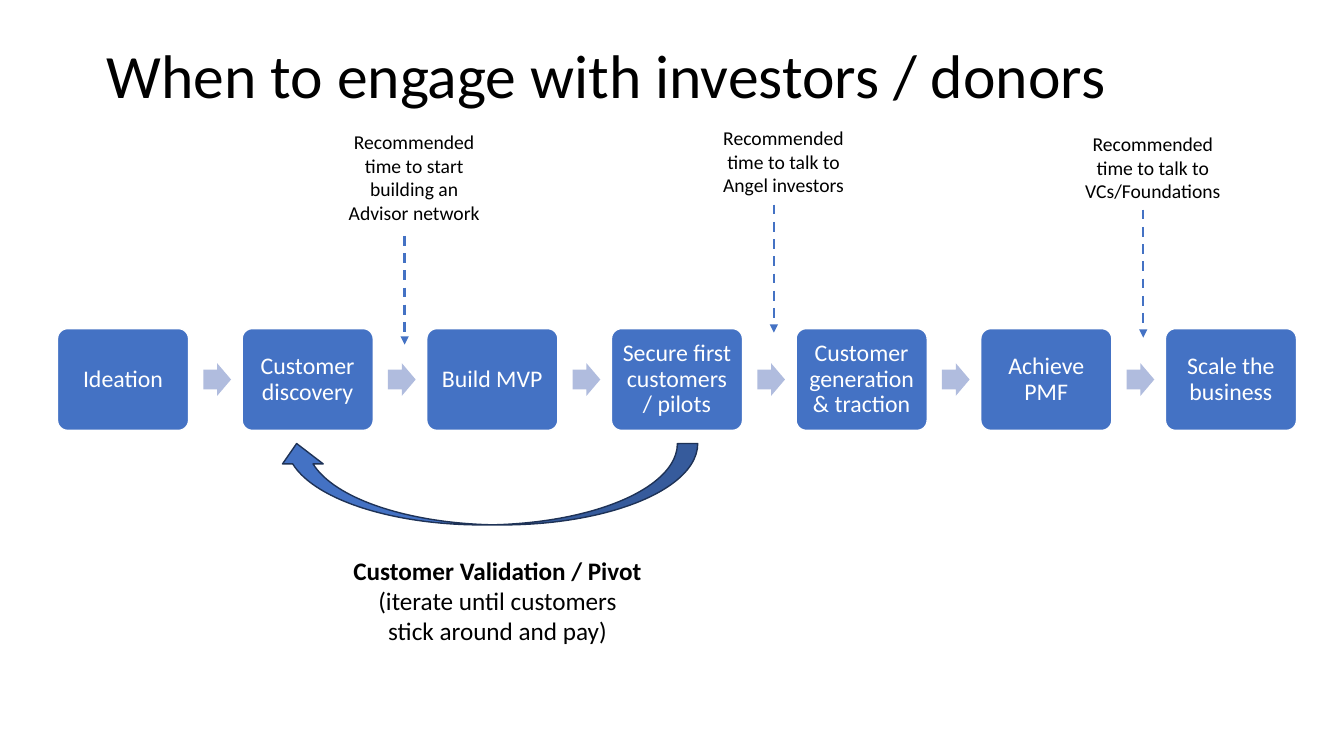
from dataclasses import dataclass

from lxml import etree
from pptx import Presentation
from pptx import util as u
from pptx.dml.color import RGBColor
from pptx.enum import dml, shapes, text
from pptx.oxml.ns import qn


@dataclass(frozen=True)
class Theme:
    font: str = "Calibri"
    blue: str = "4472C4"
    pale_blue: str = "B0BCDE"
    navy: str = "1E3256"
    white: str = "FFFFFF"
    black: str = "000000"
    title: int = 44
    body: int = 18
    step: int = 17
    note: int = 14


@dataclass(frozen=True)
class Box:
    """A region in inches."""
    left: float
    top: float
    width: float
    height: float

    def share(self, left, top, width, height):
        """The region at the given shares of this one."""
        return Box(self.left + left * self.width, self.top + top * self.height,
                   width * self.width, height * self.height)

    def lengths(self):
        return [u.Inches(n) for n in (self.left, self.top, self.width, self.height)]


THEME = Theme()
SLIDE = Box(0, 0, 13.33, 7.5)
STEPS = ["Ideation", "Customer\ndiscovery", "Build MVP", "Secure first customers / pilots",
         "Customer generation & traction", "Achieve PMF", "Scale the business"]
FLOW = Box(0.57, 3.26, 12.82, 1.01)
# steps passed, note top, note height, arrow start, arrow end
MILESTONES = [
    ("Recommended time to start building an Advisor network", 2, 1.24, 1.04, 2.34, 3.42),
    ("Recommended time to talk to Angel investors", 4, 1.20, 0.81, 2.03, 3.30),
    ("Recommended time to talk to VCs/Foundations", 6, 1.26, 0.81, 2.08, 3.35),
]


def write(frame, lines, size, color, align=text.PP_ALIGN.CENTER, spacing=1.0, middle=False):
    frame.word_wrap = True
    frame.vertical_anchor = text.MSO_ANCHOR.MIDDLE if middle else text.MSO_ANCHOR.TOP
    for number, line in enumerate(lines):
        paragraph = frame.add_paragraph() if number else frame.paragraphs[0]
        paragraph.text = line
        paragraph.alignment = align
        paragraph.line_spacing = spacing
        paragraph.font.name = THEME.font
        paragraph.font.size = u.Pt(size)
        paragraph.font.color.rgb = RGBColor.from_string(color)


def add_text(slide, box, lines, size, **options):
    frame = slide.shapes.add_textbox(*box.lengths()).text_frame
    write(frame, lines, size, THEME.black, **options)
    return frame


def add_filled(slide, kind, box, fill, line=None, adjustments=()):
    shape = slide.shapes.add_shape(kind, *box.lengths())
    shape.shadow.inherit = False
    shape.fill.solid()
    shape.fill.fore_color.rgb = RGBColor.from_string(fill)
    if line:
        shape.line.color.rgb = RGBColor.from_string(line)
        shape.line.width = u.Pt(1)
    else:
        shape.line.fill.background()
    for number, value in enumerate(adjustments):
        shape.adjustments[number] = value
    return shape


def add_dashed_arrow(slide, x, start, end):
    arrow = slide.shapes.add_connector(shapes.MSO_CONNECTOR.STRAIGHT,
                                       *[u.Inches(n) for n in (x, start, x, end)])
    arrow.line.color.rgb = RGBColor.from_string(THEME.blue)
    arrow.line.width = u.Pt(1.75)
    arrow.line.dash_style = dml.MSO_LINE.DASH
    properties = arrow.element.spPr
    etree.SubElement(properties.find(qn("a:ln")), qn("a:tailEnd"), type="triangle")
    etree.SubElement(properties, qn("a:effectLst"))


def add_title(slide, box):
    add_text(slide, box, ["When to engage with investors / donors"], THEME.title,
             align=text.PP_ALIGN.LEFT, spacing=0.9, middle=True)


def add_flow(slide, box):
    column = 1 / len(STEPS)
    for number, label in enumerate(STEPS):
        cell = box.share(number * column, 0, column, 1)
        step = add_filled(slide, shapes.MSO_SHAPE.ROUNDED_RECTANGLE,
                          cell.share(0, 0, 0.71, 1), THEME.blue, THEME.white, [0.1])
        frame = step.text_frame
        frame.margin_left = frame.margin_right = u.Inches(0.07)
        frame.margin_top = frame.margin_bottom = u.Inches(0.07)
        write(frame, [label], THEME.step, THEME.white, spacing=0.9, middle=True)
        if number < len(STEPS) - 1:
            add_filled(slide, shapes.MSO_SHAPE.RIGHT_ARROW, cell.share(0.79, 0.34, 0.15, 0.32),
                       THEME.pale_blue, adjustments=[0.6, 0.5])


def add_milestones(slide, flow):
    pitch = flow.width / len(STEPS)
    for label, passed, top, height, start, end in MILESTONES:
        x = flow.left + (passed - 0.12) * pitch
        add_text(slide, Box(x - 0.7, top, 1.59, height), [label], THEME.note)
        add_dashed_arrow(slide, x, start, end)


def add_pivot_loop(slide, box):
    loop = add_filled(slide, shapes.MSO_SHAPE.CURVED_DOWN_ARROW, box.share(0, 0, 1, 0.39),
                      THEME.blue, THEME.navy)
    loop.rotation = 180
    frame = add_text(slide, box.share(0.13, 0.51, 0.79, 0.49),
                     ["Customer Validation / Pivot",
                      "(iterate until customers\nstick around and pay)"], THEME.body)
    frame.paragraphs[0].font.bold = True


def main():
    presentation = Presentation()
    presentation.slide_width = u.Inches(SLIDE.width)
    presentation.slide_height = u.Inches(SLIDE.height)
    slide = presentation.slides.add_slide(presentation.slide_layouts[6])
    add_flow(slide, FLOW)
    add_pivot_loop(slide, Box(2.74, 4.4, 4.18, 2.07))
    add_milestones(slide, FLOW)
    add_title(slide, Box(0.96, 0.31, 11.5, 0.94))
    presentation.save("out.pptx")


if __name__ == "__main__":
    main()
